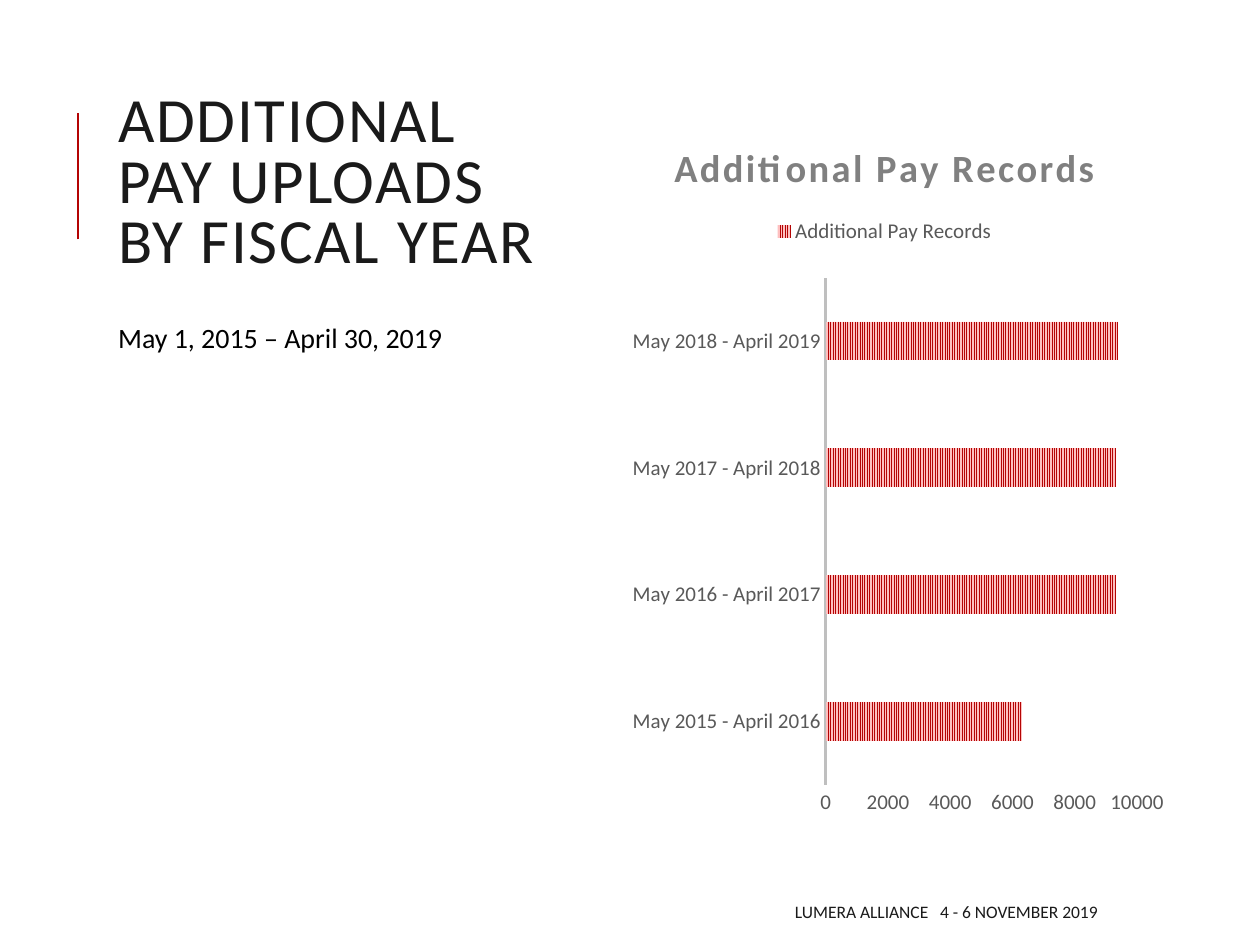
from lxml import etree
from pptx import Presentation
from pptx.chart.data import CategoryChartData
from pptx.dml.color import RGBColor
from pptx.enum import chart as ch, dml, shapes, text
from pptx.oxml import ns
from pptx.util import Pt

COLORS = {"red": "B40404", "pink": "FEBFBF", "ink": "1A1A1A", "black": "000000",
          "label": "595959", "heading": "808080", "axis": "BFBFBF"}
FONT = "Calibri"


def rgb(name):
    return RGBColor.from_string(COLORS[name])


def add_text(words, left, top, width, height, size, color="ink", spacing=0,
             anchor=text.MSO_ANCHOR.MIDDLE, align=text.PP_ALIGN.LEFT,
             line=1.0, before=0, after=0):
    frame = slide.shapes.add_textbox(Pt(left), Pt(top), Pt(width), Pt(height)).text_frame
    frame.word_wrap = True
    frame.vertical_anchor = anchor
    paragraph = frame.paragraphs[0]
    paragraph.alignment = align
    paragraph.line_spacing = line
    paragraph.space_before, paragraph.space_after = Pt(before), Pt(after)
    run = paragraph.add_run()
    run.text = words
    run.font.name, run.font.size = FONT, Pt(size)
    run.font.color.rgb = rgb(color)
    if spacing:
        run.font._element.set("spc", str(round(spacing * 100)))


deck = Presentation()
deck.slide_width, deck.slide_height = Pt(720), Pt(540)
slide = deck.slides.add_slide(deck.slide_layouts[6])

# Accent rule and the left column
accent = slide.shapes.add_connector(
    shapes.MSO_CONNECTOR.STRAIGHT, Pt(44.64), Pt(136.8), Pt(44.64), Pt(64.8))
accent.line.color.rgb = rgb("red")
accent.line.width = Pt(1.5)
etree.SubElement(accent._element.spPr, ns.qn("a:effectLst"))

add_text("ADDITIONAL PAY UPLOADS BY FISCAL YEAR", 60.5, 37.4, 259.2, 136.8,
         size=36, spacing=1, line=0.8)
add_text("May 1, 2015 – April 30, 2019", 60.5, 178, 259.2, 296, size=16, color="black",
         anchor=text.MSO_ANCHOR.TOP, line=1.08, before=6, after=2)

# Records per fiscal year
records = CategoryChartData()
records.categories = [f"May {year} - April {year + 1}" for year in range(2015, 2019)]
records.add_series("Additional Pay Records", [6300, 9300, 9300, 9400])
chart = slide.shapes.add_chart(ch.XL_CHART_TYPE.BAR_CLUSTERED, Pt(337.7), Pt(64.8),
                               Pt(335.5), Pt(408.2), records).chart
chart.font.name, chart.font.size = FONT, Pt(10)

chart.has_title = True
heading = chart.chart_title.text_frame.paragraphs[0].add_run()
heading.text = "Additional Pay Records"
heading.font._element.set("spc", "150")
heading.font.bold = True
chart.has_legend = True
chart.legend.position = ch.XL_LEGEND_POSITION.TOP
chart.legend.include_in_layout = False

years, amounts = chart.category_axis, chart.value_axis
for font, size, color in ((heading.font, 22, "heading"),
                          (chart.legend.font, 12, "label"),
                          (years.tick_labels.font, 12, "label"),
                          (amounts.tick_labels.font, 12, "label")):
    font.name, font.size = FONT, Pt(size)
    font.color.rgb = rgb(color)
for axis in (years, amounts):
    axis.has_major_gridlines = False
    axis.major_tick_mark = axis.minor_tick_mark = ch.XL_TICK_MARK.NONE
years.format.line.color.rgb = rgb("axis")
years.format.line.width = Pt(1.5)
amounts.format.line.fill.background()
amounts.minimum_scale, amounts.maximum_scale, amounts.major_unit = 0, 10000, 2000
amounts.tick_labels.number_format = "General"
amounts.tick_labels.number_format_is_linked = False

bars = chart.plots[0]
bars.gap_width, bars.overlap, bars.vary_by_categories = 227, -48, False
stripes = bars.series[0].format.fill
stripes.patterned()
stripes.pattern = dml.MSO_PATTERN.NARROW_VERTICAL
stripes.fore_color.rgb, stripes.back_color.rgb = rgb("red"), rgb("pink")

# Fixed inner plot area, as fractions of the chart
plot_area = chart.element.find(".//" + ns.qn("c:plotArea"))
for automatic in plot_area.findall(ns.qn("c:layout")):
    plot_area.remove(automatic)
layout = etree.Element(ns.qn("c:layout"))
plot_area.insert(0, layout)
manual = etree.SubElement(layout, ns.qn("c:manualLayout"))
for tag, value in (("layoutTarget", "inner"), ("xMode", "edge"), ("yMode", "edge"),
                   ("x", 0.4), ("y", 0.23), ("w", 0.53), ("h", 0.71)):
    etree.SubElement(manual, ns.qn("c:" + tag)).set("val", str(value))

add_text("LUMERA ALLIANCE   4 - 6 NOVEMBER 2019", 285.8, 509.8, 348.5, 21.6,
         size=10, align=text.PP_ALIGN.RIGHT)

deck.save("out.pptx")
